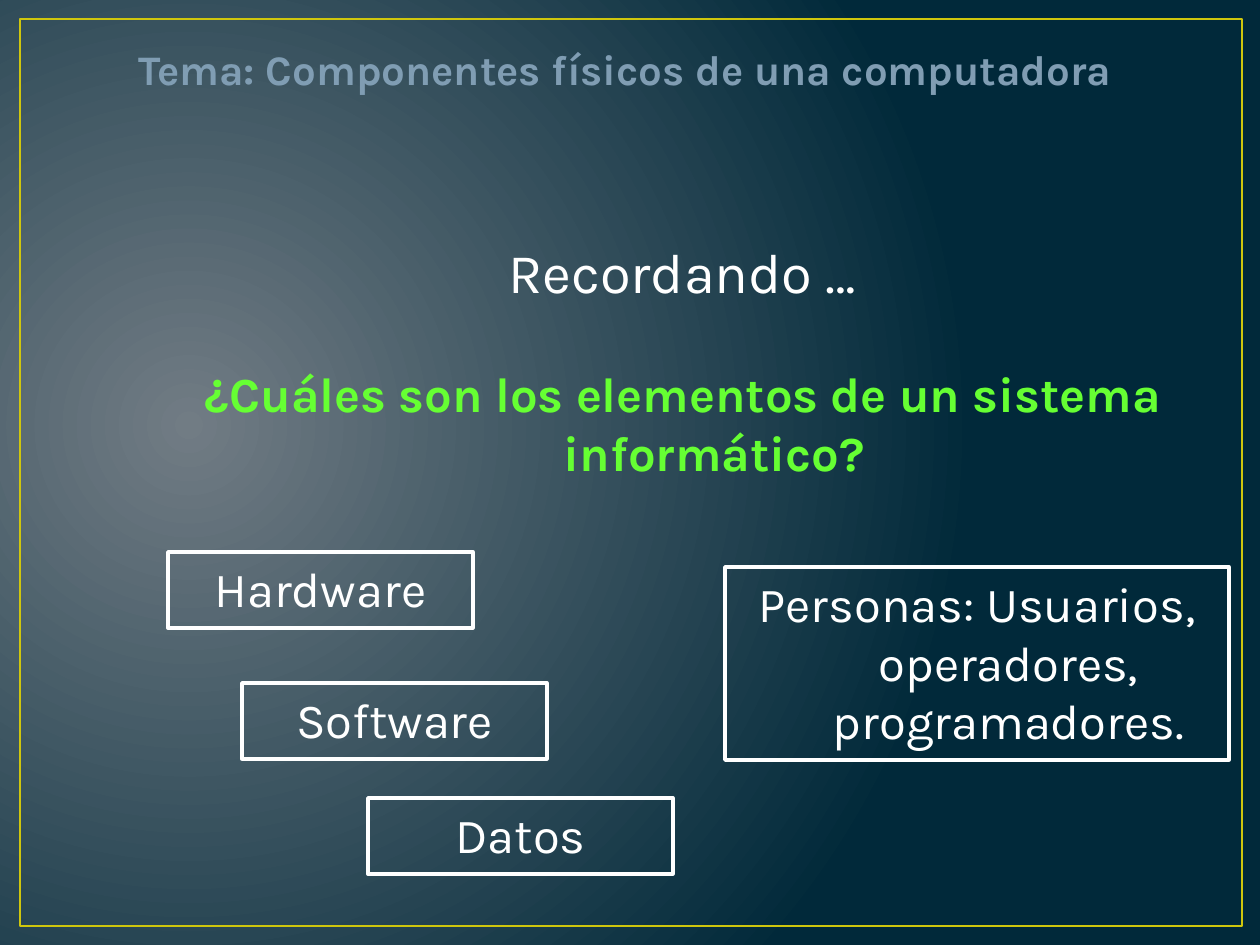
from lxml.etree import SubElement
from pptx import Presentation
from pptx.dml.color import RGBColor
from pptx.enum.shapes import MSO_SHAPE
from pptx.enum.text import MSO_ANCHOR, MSO_AUTO_SIZE, PP_ALIGN
from pptx.oxml.ns import qn
from pptx.util import Emu, Pt

EMU_PER_PX = 914400 / 126


def px(length):
    return Emu(round(length * EMU_PER_PX))


def color(value):
    return RGBColor.from_string(value)


class Deck:
    font = "Karla"
    white = "FFFFFF"
    green = "66FF33"
    muted = "809DB3"
    gold = "CFC60D"
    glow = ("717C84", "01293A")

    def __init__(self, width, height):
        self.presentation = Presentation()
        self.presentation.slide_width = px(width)
        self.presentation.slide_height = px(height)
        self.slide = self.presentation.slides.add_slide(self.presentation.slide_layouts[6])

    def background(self, focus):
        fill = self.slide.background.fill
        fill.gradient()
        for stop, shade in zip(fill.gradient_stops, self.glow):
            stop.color.rgb = color(shade)
        gradient = next(self.slide.element.iter(qn("a:gradFill")))
        gradient.remove(gradient.find(qn("a:lin")))
        circle = SubElement(gradient, qn("a:path"), {"path": "circle"})
        SubElement(circle, qn("a:fillToRect"), focus)

    def outline(self, box, line, width):
        rectangle = self.slide.shapes.add_shape(MSO_SHAPE.RECTANGLE, *map(px, box))
        rectangle.shadow.inherit = False
        rectangle.fill.background()
        rectangle.line.color.rgb = color(line)
        rectangle.line.width = Pt(width)
        return rectangle

    def set_text(self, shape, text, size, ink, bold=False, align=PP_ALIGN.CENTER,
                 hanging=False, wrap=True):
        frame = shape.text_frame
        layout = {"word_wrap": wrap, "auto_size": MSO_AUTO_SIZE.SHAPE_TO_FIT_TEXT,
                  "vertical_anchor": MSO_ANCHOR.TOP}
        for name, value in layout.items():
            setattr(frame, name, value)
        paragraph = frame.paragraphs[0]
        paragraph.alignment = align
        if hanging:
            properties = paragraph._p.get_or_add_pPr()
            properties.set("marL", str(px(63)))
            properties.set("indent", str(-px(63)))
            before = SubElement(properties, qn("a:spcBef"))
            SubElement(before, qn("a:spcPct"), {"val": "20000"})
        run = paragraph.add_run()
        run.text = text
        for name, value in {"name": self.font, "size": Pt(size), "bold": bold}.items():
            setattr(run.font, name, value)
        run.font.color.rgb = color(ink)

    def label(self, box, text, size, ink, **style):
        self.set_text(self.slide.shapes.add_textbox(*map(px, box)), text, size, ink, **style)

    def element(self, box, text):
        self.set_text(self.outline(box, self.white, 2), text, 28, self.white, hanging=True)


def main():
    deck = Deck(1260, 945)
    deck.background({"l": "15000", "t": "50000", "r": "85000", "b": "60000"})
    deck.outline((20, 19, 1222, 907), deck.gold, 1.5)
    deck.label((126, 37, 1051, 63), "Tema: Componentes físicos de una computadora",
               24, deck.muted, bold=True, align=PP_ALIGN.LEFT, wrap=False)
    deck.label((126, 357, 1113, 130), "¿Cuáles son los elementos de un sistema informático?",
               28, deck.green, bold=True, hanging=True)
    deck.label((126, 231, 1113, 79), "Recordando …", 32, deck.white)
    for left, top, part in ((168, 552, "Hardware"), (242, 683, "Software"), (368, 798, "Datos")):
        deck.element((left, top, 305, 76), part)
    deck.element((725, 567, 504, 193), "Personas: Usuarios, operadores, programadores.")
    deck.presentation.save("out.pptx")


if __name__ == "__main__":
    main()
